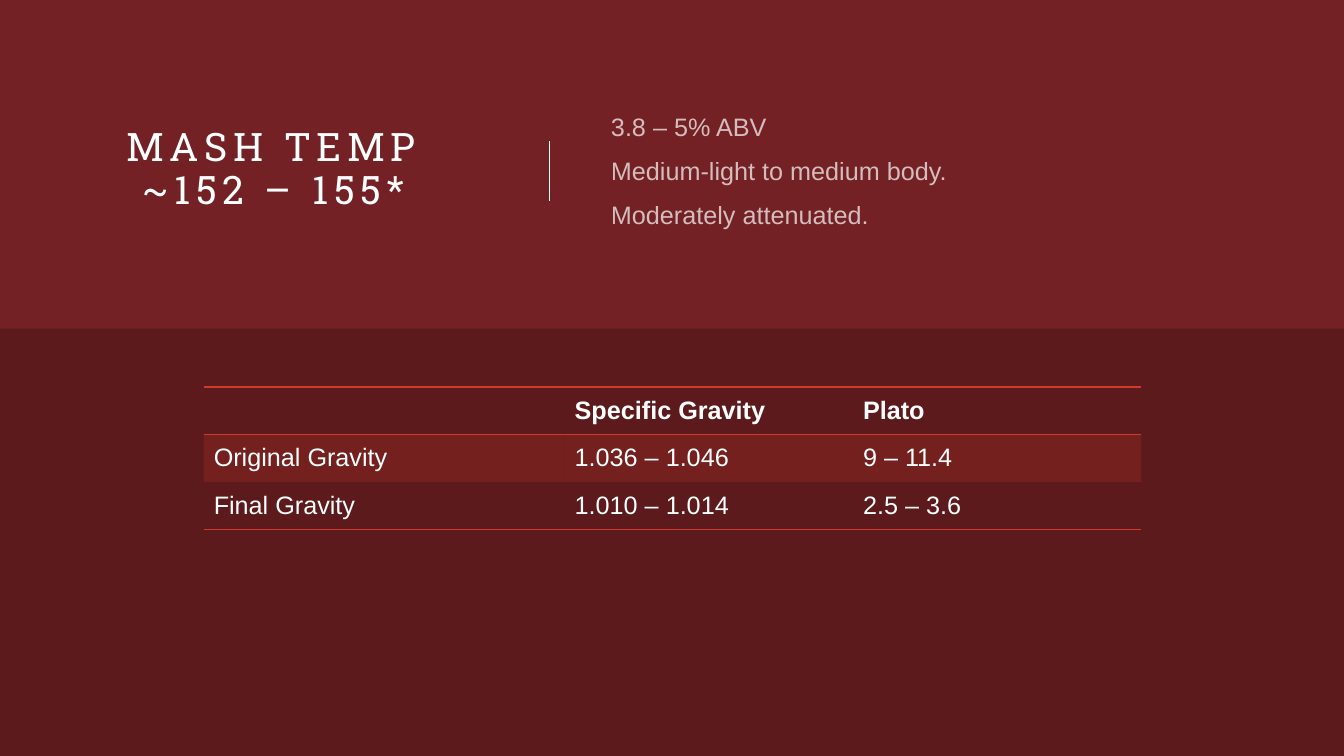
from lxml import etree
from pptx import Presentation
from pptx.dml.color import RGBColor
from pptx.enum.shapes import MSO_CONNECTOR, MSO_SHAPE
from pptx.enum.text import MSO_ANCHOR, MSO_AUTO_SIZE, PP_ALIGN
from pptx.oxml.ns import qn
from pptx.util import Inches, Pt

RECTANGLE = MSO_SHAPE.RECTANGLE
STRAIGHT = MSO_CONNECTOR.STRAIGHT
MIDDLE = MSO_ANCHOR.MIDDLE
CENTER, LEFT = PP_ALIGN.CENTER, PP_ALIGN.LEFT

WINE = RGBColor(0x73, 0x21, 0x24)
BLACK = RGBColor(0x00, 0x00, 0x00)
WHITE = RGBColor(0xFF, 0xFF, 0xFF)
RED = RGBColor(0xCF, 0x3A, 0x2A)

WIDTH, HEIGHT = Inches(13.33), Inches(7.5)
HEADER_TOP, HEADER_HEIGHT = Inches(0.59), Inches(2.2)
ROW_HEIGHT = Inches(0.47)
COLUMN_WIDTHS = [Inches(3.58), Inches(2.86), Inches(2.86)]

GRAVITY_ROWS = [
    ["", "Specific Gravity", "Plato"],
    ["Original Gravity", "1.036 – 1.046", "9 – 11.4"],
    ["Final Gravity", "1.010 – 1.014", "2.5 – 3.6"],
]


def set_alpha(parent, percent):
    """Make the solid colour inside an XML element partly transparent."""
    color = next(parent.iter(qn("a:srgbClr")))
    etree.SubElement(color, qn("a:alpha"), val=str(percent * 1000))


def fill_solid(fill, color, alpha):
    fill.solid()
    fill.fore_color.rgb = color


def write(frame, lines, size=18, font="Arial", color=WHITE, alpha=None, bold=False,
          align=LEFT, before=0, line_spacing=1.0, tracking=0):
    """Write one paragraph per line; a vertical tab breaks a line inside one."""
    frame.text = "\n".join(lines)
    for paragraph in frame.paragraphs:
        paragraph.alignment = align
        paragraph.space_before = Pt(before)
        paragraph.line_spacing = line_spacing
        for run in paragraph.runs:
            run.font.size, run.font.name, run.font.bold = Pt(size), font, bold
            run.font.color.rgb = color
            properties = run.font._element
            if alpha is not None:
                set_alpha(properties, alpha)
            if tracking:
                properties.set("spc", str(tracking * 100))


def fill_placeholder(placeholder, lines, left, width, **text_format):
    placeholder.left, placeholder.top = left, HEADER_TOP
    placeholder.width, placeholder.height = width, HEADER_HEIGHT
    frame = placeholder.text_frame
    frame.margin_left = frame.margin_right = frame.margin_top = frame.margin_bottom = 0
    frame.vertical_anchor = MIDDLE
    frame.word_wrap = True
    frame.auto_size = MSO_AUTO_SIZE.NONE
    write(frame, lines, **text_format)


def remove_bullets(frame):
    for paragraph in frame.paragraphs:
        properties = paragraph._p.get_or_add_pPr()
        properties.set("marL", "0")
        properties.set("indent", "0")
        etree.SubElement(properties, qn("a:buNone"))


def add_lower_band(slide):
    top = Inches(3.26)
    band = slide.shapes.add_shape(RECTANGLE, 0, top, WIDTH, HEIGHT - top)
    band.shadow.inherit = False
    band.fill.solid()
    band.fill.fore_color.rgb = BLACK
    set_alpha(band._element.spPr, 20)
    band.line.fill.background()


def add_divider(slide):
    x = Inches(5.45)
    divider = slide.shapes.add_connector(STRAIGHT, x, Inches(1.4), x, Inches(1.99))
    divider.line.color.rgb = WHITE
    divider.line.width = Pt(1)
    etree.SubElement(divider._element.spPr, qn("a:effectLst"))


def set_borders(cell, ruled_sides):
    """Rule the named sides (T, B) in red and clear the others."""
    properties = cell._tc.get_or_add_tcPr()
    for position, side in enumerate("LRTB"):
        border = etree.Element(qn(f"a:ln{side}"), w=str(Pt(1)))
        if side in ruled_sides:
            fill = etree.SubElement(border, qn("a:solidFill"))
            etree.SubElement(fill, qn("a:srgbClr"), val=str(RED))
        else:
            etree.SubElement(border, qn("a:noFill"))
        properties.insert(position, border)


def add_gravity_table(slide):
    frame = slide.shapes.add_table(
        len(GRAVITY_ROWS), len(COLUMN_WIDTHS), Inches(2.02), Inches(3.84),
        sum(COLUMN_WIDTHS), ROW_HEIGHT * len(GRAVITY_ROWS))
    table = frame.table
    table.horz_banding = False
    for column, width in zip(table.columns, COLUMN_WIDTHS):
        column.width = width
    row_borders = ["TB", "T", "B"]
    for row_index, texts in enumerate(GRAVITY_ROWS):
        table.rows[row_index].height = ROW_HEIGHT
        for column_index, text in enumerate(texts):
            cell = table.cell(row_index, column_index)
            cell.vertical_anchor = MIDDLE
            write(cell.text_frame, [text], bold=row_index == 0)
            if row_index == 1:
                cell.fill.solid()
                cell.fill.fore_color.rgb = RED
                set_alpha(cell._tc.tcPr, 20)
            else:
                cell.fill.background()
            set_borders(cell, row_borders[row_index])


def main():
    presentation = Presentation()
    presentation.slide_width, presentation.slide_height = WIDTH, HEIGHT
    slide = presentation.slides.add_slide(presentation.slide_layouts[1])
    slide.background.fill.solid()
    slide.background.fill.fore_color.rgb = WINE

    add_lower_band(slide)
    add_divider(slide)
    fill_placeholder(slide.shapes.title, ["MASH TEMP\v~152 – 155*"],
                     Inches(0.59), Inches(4.25), size=28, font="Roboto Slab",
                     align=CENTER, line_spacing=0.9, tracking=4)
    body = slide.placeholders[1]
    fill_placeholder(body, ["3.8 – 5% ABV", "Medium-light to medium body.",
                            "Moderately attenuated."],
                     Inches(6.06), Inches(6.68), alpha=70, before=10)
    remove_bullets(body.text_frame)
    add_gravity_table(slide)
    presentation.save("out.pptx")


if __name__ == "__main__":
    main()
